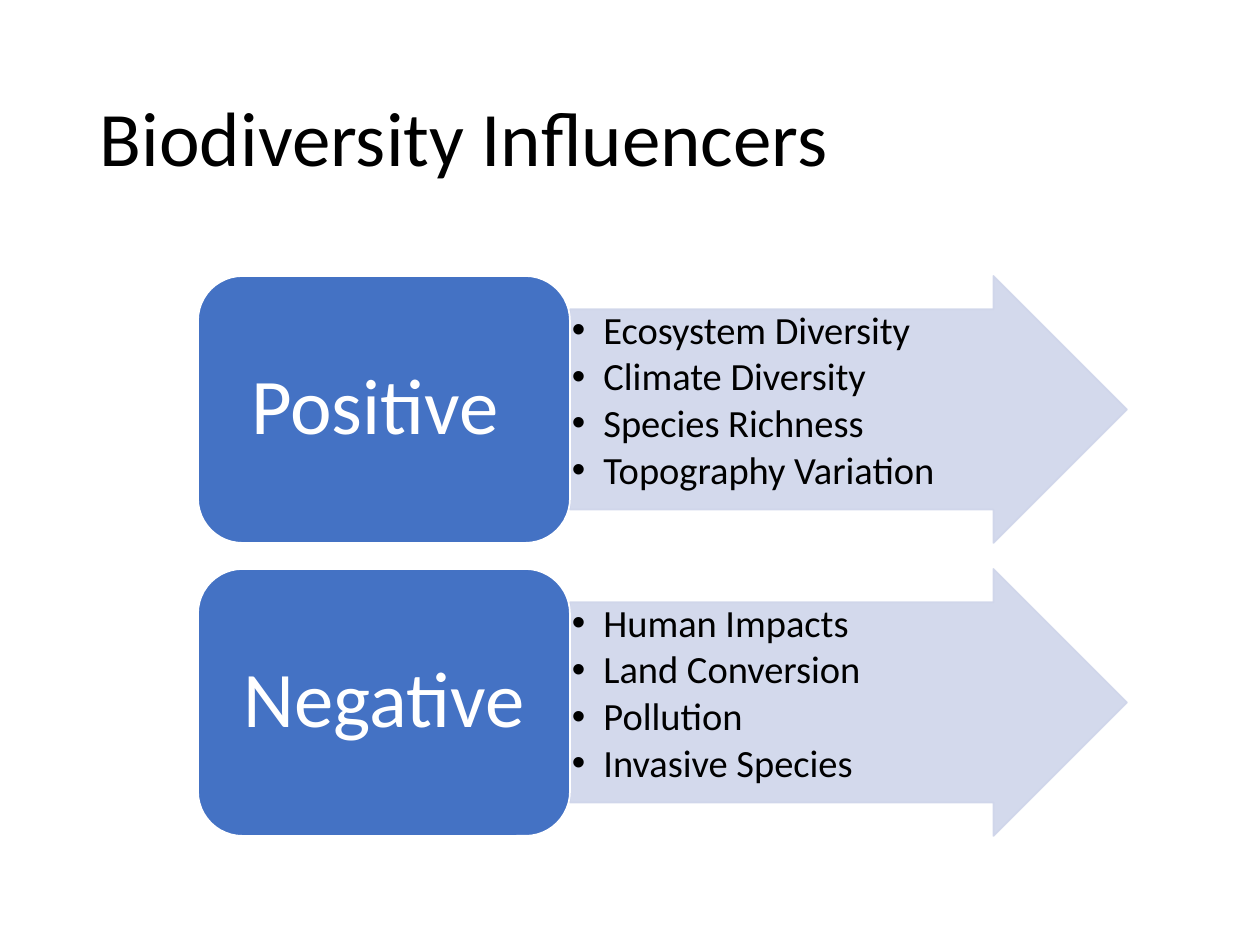
import pptx
import pptx.dml.color
import pptx.enum.shapes
import pptx.enum.text
import pptx.util
from lxml import etree
from pptx.oxml.ns import qn

PX = 914400 / 126
BLACK = pptx.dml.color.RGBColor(0x00, 0x00, 0x00)
WHITE = pptx.dml.color.RGBColor(0xFF, 0xFF, 0xFF)
BLUE = pptx.dml.color.RGBColor(0x44, 0x72, 0xC4)
PALE_BLUE = pptx.dml.color.RGBColor(0xCF, 0xD5, 0xEA)
SHAPES = pptx.enum.shapes.MSO_SHAPE
MIDDLE = pptx.enum.text.MSO_ANCHOR.MIDDLE

INFLUENCERS = [
    ("Positive ", ["Ecosystem Diversity", "Climate Diversity",
                   "Species Richness", "Topography Variation"]),
    ("Negative", ["Human Impacts", "Land Conversion",
                  "Pollution", "Invasive Species"]),
]
ROW_TOP, ROW_PITCH, ROW_HEIGHT = 276, 293, 267
LABEL_LEFT, LABEL_WIDTH = 198, 372
ARROW_LEFT, ARROW_WIDTH = LABEL_LEFT + LABEL_WIDTH, 557


def px(*lengths):
    return [round(length * PX) for length in lengths]


def style_text(frame, size, color, margins):
    """Set wrapping, margins (horizontal, vertical), line spacing and font."""
    frame.word_wrap = True
    frame.margin_left = frame.margin_right = px(margins[0])[0]
    frame.margin_top = frame.margin_bottom = px(margins[1])[0]
    for paragraph in frame.paragraphs:
        paragraph.line_spacing = 0.9
        for run in paragraph.runs:
            run.font.name = "Calibri"
            run.font.size = pptx.util.Pt(size)
            run.font.color.rgb = color


deck = pptx.Presentation()
deck.slide_width, deck.slide_height = px(1260, 945)
slide = deck.slides.add_slide(deck.slide_layouts[6])

title = slide.shapes.add_textbox(*px(87, 50, 1086, 183)).text_frame
title.text = "Biodiversity Influencers"
title.vertical_anchor = MIDDLE
style_text(title, 44, BLACK, (13, 6))

for row, (effect, causes) in enumerate(INFLUENCERS):
    top = ROW_TOP + row * ROW_PITCH

    arrow = slide.shapes.add_shape(
        SHAPES.RIGHT_ARROW, *px(ARROW_LEFT, top, ARROW_WIDTH, ROW_HEIGHT))
    arrow.shadow.inherit = False
    arrow.adjustments[0] = 0.75
    arrow.adjustments[1] = 0.5
    arrow.fill.solid()
    arrow.fill.fore_color.rgb = PALE_BLUE
    arrow.line.color.rgb = PALE_BLUE
    arrow.line.width = pptx.util.Pt(1)
    for color in arrow._element.spPr.iter(qn("a:srgbClr")):
        etree.SubElement(color, qn("a:alpha"), val="90000")

    cause_list = slide.shapes.add_textbox(
        *px(ARROW_LEFT, top + 33, 457, 200)).text_frame
    cause_list.text = "\n".join(causes)
    for paragraph in cause_list.paragraphs:
        properties = paragraph._p.get_or_add_pPr()
        properties.set("marL", "228600")
        properties.set("indent", "-228600")
        etree.SubElement(properties, qn("a:buFont"), typeface="Arial")
        etree.SubElement(properties, qn("a:buChar"), char="•")
        paragraph.space_after = pptx.util.Pt(2.9)
    style_text(cause_list, 22, BLACK, (2, 2))

    label = slide.shapes.add_shape(
        SHAPES.ROUNDED_RECTANGLE, *px(LABEL_LEFT, top, LABEL_WIDTH, ROW_HEIGHT))
    label.shadow.inherit = False
    label.fill.solid()
    label.fill.fore_color.rgb = BLUE
    label.line.color.rgb = WHITE
    label.line.width = pptx.util.Pt(1)
    label.text_frame.text = effect
    label.text_frame.vertical_anchor = MIDDLE
    label.text_frame.paragraphs[0].alignment = pptx.enum.text.PP_ALIGN.CENTER
    style_text(label.text_frame, 45, WHITE, (24, 12))

deck.save("out.pptx")
